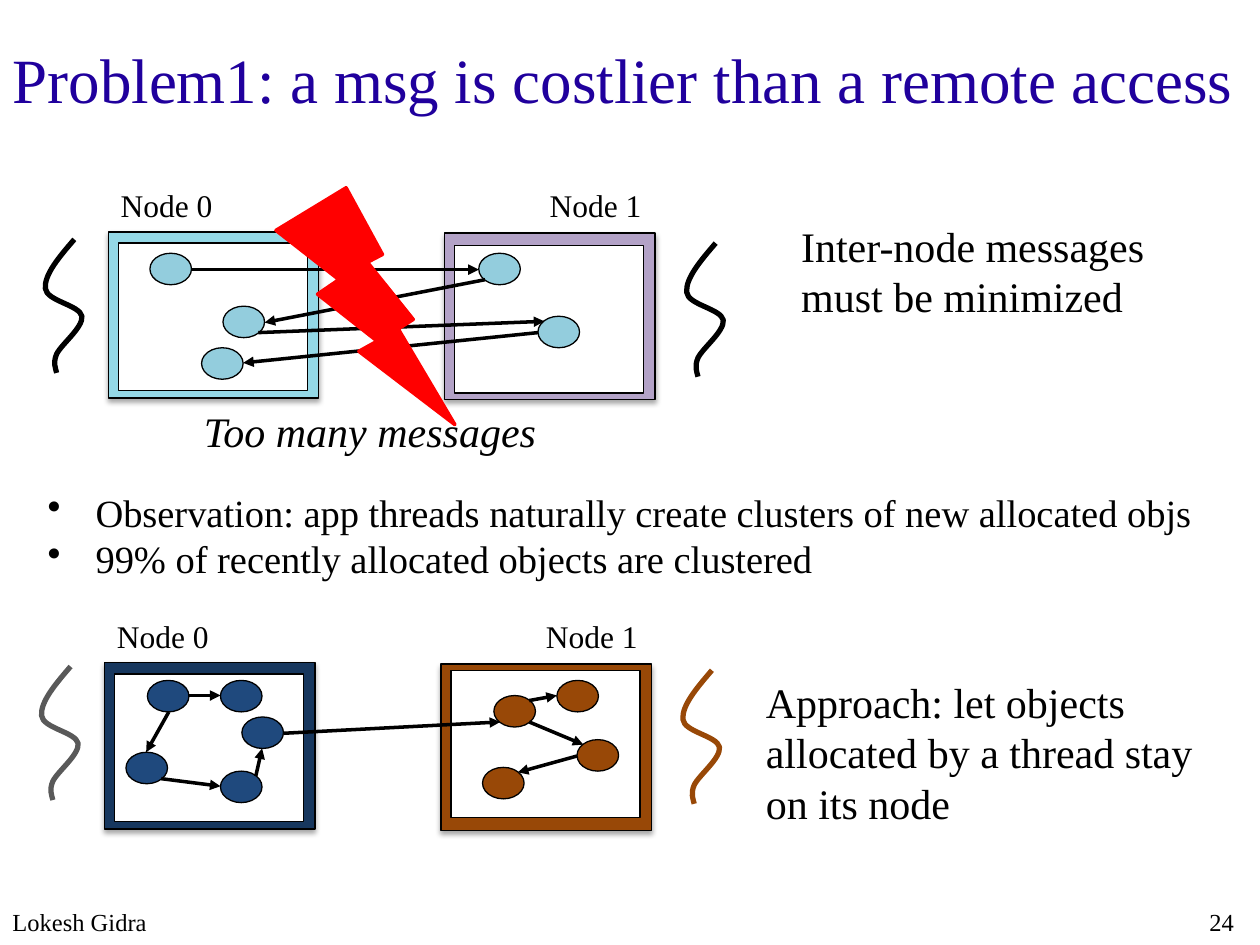
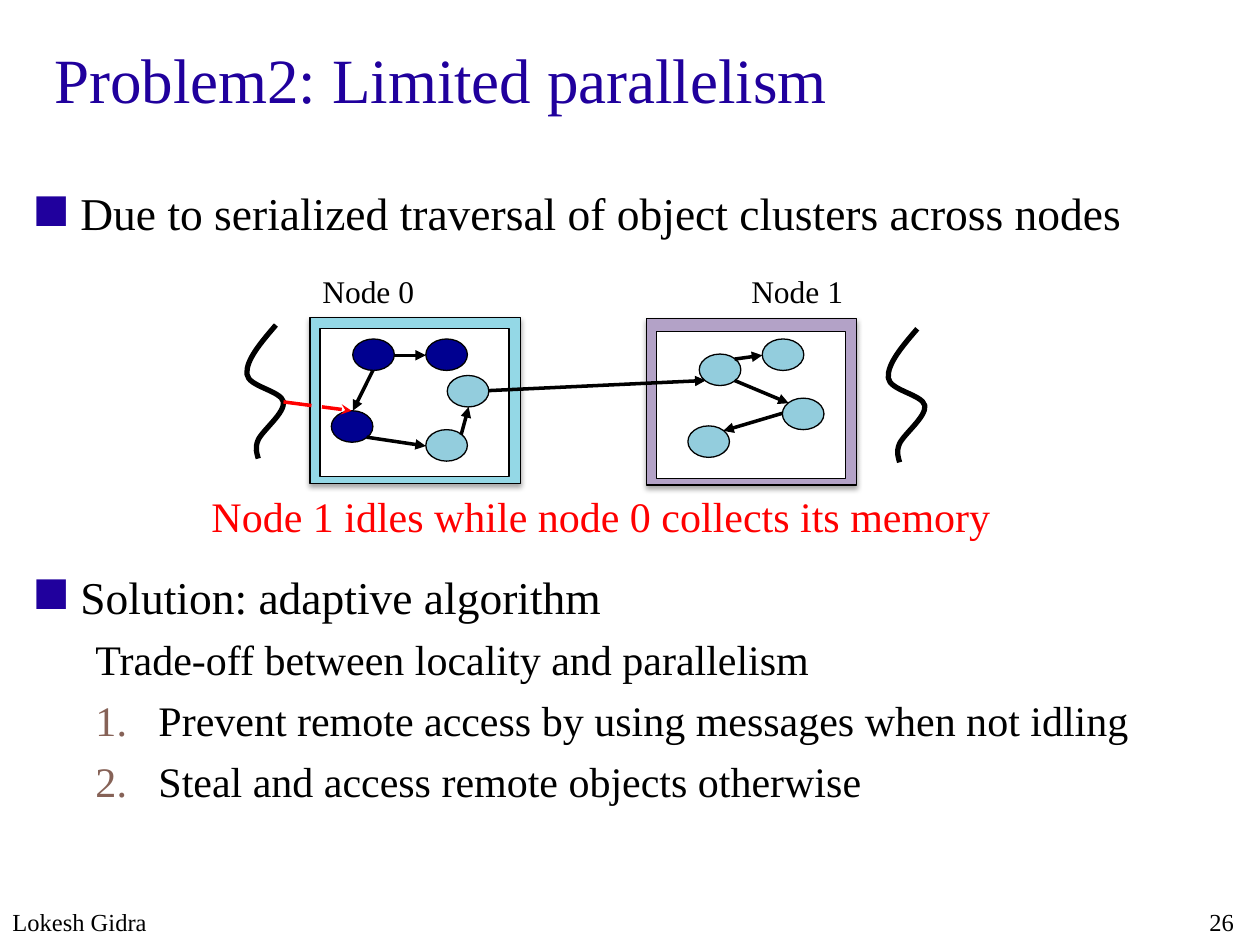
from lxml import etree
from pptx import Presentation
from pptx.dml.color import RGBColor
from pptx.enum.shapes import MSO_CONNECTOR, MSO_SHAPE
from pptx.enum.text import MSO_ANCHOR, PP_ALIGN
from pptx.oxml.ns import qn
from pptx.util import Pt

PX = 9144  # one px is a hundredth of an inch
STRAIGHT = MSO_CONNECTOR.STRAIGHT
RECTANGLE, OVAL, BOLT = MSO_SHAPE.RECTANGLE, MSO_SHAPE.OVAL, MSO_SHAPE.LIGHTNING_BOLT
TOP, MIDDLE = MSO_ANCHOR.TOP, MSO_ANCHOR.MIDDLE
LEFT, RIGHT = PP_ALIGN.LEFT, PP_ALIGN.RIGHT

BLACK = RGBColor(0x00, 0x00, 0x00)
WHITE = RGBColor(0xFF, 0xFF, 0xFF)
RED = RGBColor(0xFF, 0x00, 0x00)
GRAY = RGBColor(0x59, 0x59, 0x59)
TITLE_BLUE = RGBColor(0x20, 0x00, 0x9D)
NUMBER_BROWN = RGBColor(0x86, 0x62, 0x57)
CYAN = RGBColor(0x94, 0xD8, 0xE6)
LAVENDER = RGBColor(0xB3, 0xA2, 0xC7)
NAVY = RGBColor(0x17, 0x37, 0x5E)
BLUE = RGBColor(0x1F, 0x49, 0x7D)
BROWN = RGBColor(0x98, 0x48, 0x07)
PALE_BLUE = RGBColor(0x93, 0xCD, 0xDD)
DARK_BLUE = RGBColor(0x00, 0x00, 0x90)

FONT_NAME = "Times New Roman"
OVAL_WIDTH, OVAL_HEIGHT = 33, 25


def write_text(shape, lines, size, color=BLACK, align=LEFT, anchor=TOP, **font_format):
    frame = shape.text_frame
    frame.word_wrap = True
    frame.vertical_anchor = anchor
    frame.text = "\n".join(lines)
    for paragraph in frame.paragraphs:
        paragraph.alignment = align
        font = paragraph.runs[0].font
        values = {"name": FONT_NAME, "size": Pt(size), **font_format}
        for name, value in values.items():
            setattr(font, name, value)
        font.color.rgb = color
    return frame


def add_filled(slide, kind, box, fill, line=BLACK, line_width=0.75):
    shape = slide.shapes.add_shape(kind, *(value * PX for value in box))
    shape.fill.solid()
    shape.fill.fore_color.rgb = fill
    shape.line.color.rgb = line
    shape.line.width = Pt(line_width)
    shape.shadow.inherit = False
    return shape


presentation = Presentation()
presentation.slide_width, presentation.slide_height = 1000 * PX, 750 * PX

# Titles and footers
slides = []
for title_text, title_left, number in [
    ("Problem1: a msg is costlier than a remote access", 0, "24"),
    ("Problem2: Limited parallelism", 33, "26"),
]:
    slide = presentation.slides.add_slide(presentation.slide_layouts[5])
    title = slide.shapes.title
    box = {"left": title_left, "top": 0, "width": 1000 - title_left, "height": 125}
    for name, value in box.items():
        setattr(title, name, value * PX)
    write_text(title, [title_text], 36, TITLE_BLUE, anchor=MIDDLE)
    for footer, left, width in [("Lokesh Gidra", 0, 612), (number, 950, 50)]:
        footer_box = slide.shapes.add_textbox(left * PX, 713 * PX, width * PX, 37 * PX)
        write_text(footer_box, [footer], 14, anchor=MIDDLE)
    slides.append(slide)
messages_slide, parallelism_slide = slides

# Objects as (left, top) within a diagram; arrows as (object, side, object, side)
DIAGONAL = 0.71
SIDES = {
    "N": (0, -1), "S": (0, 1), "W": (-1, 0), "E": (1, 0),
    "NW": (-DIAGONAL, -DIAGONAL), "NE": (DIAGONAL, -DIAGONAL),
    "SW": (-DIAGONAL, DIAGONAL), "SE": (DIAGONAL, DIAGONAL),
}
SCATTERED = [(33, 17), (91, 59), (74, 92), (294, 17), (341, 67)]
SCATTERED_ARROWS = [(0, "E", 3, "W"), (3, "SW", 1, "E"), (1, "SE", 4, "NW"), (4, "W", 2, "E")]
CLUSTERED = [(34, 17), (92, 17), (109, 46), (17, 74), (92, 89),
             (309, 29), (359, 17), (375, 64), (300, 86)]
CLUSTERED_ARROWS = [
    (0, "E", 1, "W"), (0, "S", 3, "N"), (3, "SE", 4, "W"), (4, "NE", 2, "S"),
    (2, "E", 5, "SW"), (5, "NE", 6, "W"), (5, "SE", 7, "NW"), (7, "W", 8, "NE"),
]

# Thread outline: start point, then two control points and an end point per curve
THREAD_START = (23, 0)
THREAD_CURVES = [
    [(11, 14), (-1, 28), (0, 39)],
    [(1, 49), (27, 52), (29, 61)],
    [(30, 70), (13, 83), (9, 91)],
    [(6, 98), (8, 102), (9, 106)],
]

diagrams = [
    {"slide": messages_slide, "origin": (86, 184), "frame_drop": 0, "inner_drop": 11,
     "frames": [CYAN, LAVENDER], "threads": [BLACK, BLACK],
     "objects": SCATTERED, "arrows": SCATTERED_ARROWS, "fills": [PALE_BLUE] * 5},
    {"slide": messages_slide, "origin": (83, 523), "frame_drop": 3, "inner_drop": 6,
     "frames": [NAVY, BROWN], "threads": [GRAY, BROWN],
     "objects": CLUSTERED, "arrows": CLUSTERED_ARROWS, "fills": [BLUE] * 5 + [BROWN] * 4},
    {"slide": parallelism_slide, "origin": (246, 252), "frame_drop": 0, "inner_drop": 11,
     "frames": [CYAN, LAVENDER], "threads": [BLACK, BLACK],
     "objects": CLUSTERED, "arrows": CLUSTERED_ARROWS,
     "fills": [DARK_BLUE, DARK_BLUE, PALE_BLUE, DARK_BLUE] + [PALE_BLUE] * 5},
]

connector_jobs = []
for diagram in diagrams:
    slide = diagram["slide"]
    left, top = diagram["origin"]
    frame_top = top + diagram["frame_drop"]

    # Node frames, labels and threads
    for node, inner_drop in enumerate([9, diagram["inner_drop"]]):
        frame_left = left + 267 * node
        frame = add_filled(slide, RECTANGLE, (frame_left, frame_top + node, 167, 132),
                           diagram["frames"][node])
        effects = frame._element.spPr.find(qn("a:effectLst"))
        shadow = etree.SubElement(effects, qn("a:outerShdw"), blurRad=str(Pt(3.1)),
                                  dist=str(Pt(1.8)), dir="5400000", rotWithShape="0")
        shadow_color = etree.SubElement(shadow, qn("a:srgbClr"), val=str(BLACK))
        etree.SubElement(shadow_color, qn("a:alpha"), val="35000")
        add_filled(slide, RECTANGLE, (frame_left + 8, frame_top + inner_drop, 150, 117), WHITE)

        label = slide.shapes.add_textbox((left + 333 * node) * PX, (frame_top - 41) * PX,
                                         100 * PX, 40 * PX)
        write_text(label, [f"Node {node}"], 18, align=[LEFT, RIGHT][node])

        builder = slide.shapes.build_freeform(*THREAD_START, scale=PX)
        builder.add_line_segments([curve[-1] for curve in THREAD_CURVES], close=False)
        thread = builder.convert_to_shape((left - 50 + 509 * node) * PX,
                                          (top + 6 + 3 * node) * PX)
        thread.fill.background()
        thread.line.color.rgb = diagram["threads"][node]
        thread.line.width = Pt(3)
        thread.shadow.inherit = False
        segments = list(thread._element.iter(qn("a:lnTo")))
        for segment, curve in zip(segments, THREAD_CURVES):
            segment.tag = qn("a:cubicBezTo")
            for position, (x, y) in enumerate(curve[:2]):
                control = etree.Element(qn("a:pt"), x=str(x), y=str(y))
                segment.insert(position, control)

    # Objects
    for (x, y), fill in zip(diagram["objects"], diagram["fills"]):
        add_filled(slide, OVAL, (left + x, top + y, OVAL_WIDTH, OVAL_HEIGHT), fill)

    # End points of the arrows between objects
    for start, start_side, end, end_side in diagram["arrows"]:
        points = []
        for index, side in [(start, start_side), (end, end_side)]:
            x, y = diagram["objects"][index]
            across, down = SIDES[side]
            points += [round(left + x + OVAL_WIDTH / 2 * (1 + across)),
                       round(top + y + OVAL_HEIGHT / 2 * (1 + down))]
        connector_jobs.append((slide, points, BLACK, None, "triangle"))

# Arrows, with the dashed one from the thread to its first object
connector_jobs.append((parallelism_slide, [225, 319, 279, 326], RED, "lgDash", "stealth"))
for slide, points, color, dash, head in connector_jobs:
    connector = slide.shapes.add_connector(STRAIGHT, *(value * PX for value in points))
    connector.line.color.rgb = color
    connector.line.width = Pt(2)
    line = connector.line._get_or_add_ln()
    if dash:
        etree.SubElement(line, qn("a:prstDash"), val=dash)
    etree.SubElement(line, qn("a:tailEnd"), type=head)
    etree.SubElement(connector._element.spPr, qn("a:effectLst"))

# Lightning bolt across the messages
add_filled(messages_slide, BOLT, (219, 149, 142, 188), RED, RED, 2)

# Remarks beside and below the diagrams
for slide, box, lines, color, italic in [
    (messages_slide, (152, 317, 297, 50), ["Too many messages"], BLACK, True),
    (messages_slide, (626, 170, 312, 91),
     ["Inter-node messages", "must be minimized"], BLACK, False),
    (messages_slide, (598, 532, 374, 131),
     ["Approach: let objects allocated by a thread stay on its node"], BLACK, False),
    (parallelism_slide, (158, 384, 646, 50),
     ["Node 1 idles while node 0 collects its memory"], RED, False),
]:
    remark = slide.shapes.add_textbox(*(value * PX for value in box))
    write_text(remark, lines, 24, color, italic=italic)

# Lists: text, size, level, margin, indent, space before, bullet tag, bullet value, bullet colour
DOT = (38, -38, 0, "buChar", {"char": "•"}, BLACK)
SQUARE = ("buChar", {"char": "◼"}, TITLE_BLUE)
NUMBERED = (100, -50, 6, "buAutoNum", {"type": "arabicPeriod"}, NUMBER_BROWN)
for slide, box, items in [
    (messages_slide, (28, 383, 938, 84), [
        ("Observation: app threads naturally create clusters of new allocated objs", 22, 0, *DOT),
        ("99% of recently allocated objects are clustered", 22, 0, *DOT),
    ]),
    (parallelism_slide, (16, 142, 984, 563), [
        ("Due to serialized traversal of object clusters across nodes", 26, 0, 38, -38, 0, *SQUARE),
        ("Solution: adaptive algorithm", 26, 0, 38, -38, 188, *SQUARE),
        ("Trade-off between locality and parallelism", 24, 1, 50, 0, 6, "buNone", {}, None),
        ("Prevent remote access by using messages when not idling", 24, 1, *NUMBERED),
        ("Steal and access remote objects otherwise", 24, 1, *NUMBERED),
    ]),
]:
    list_box = slide.shapes.add_textbox(*(value * PX for value in box))
    frame = write_text(list_box, [item[0] for item in items], 24)
    for paragraph, item in zip(frame.paragraphs, items):
        _, size, level, margin, indent, before, bullet, bullet_values, bullet_color = item
        paragraph.runs[0].font.size = Pt(size)
        paragraph.level = level
        paragraph.space_before = Pt(before)
        properties = paragraph._p.get_or_add_pPr()
        properties.set("marL", str(margin * PX))
        properties.set("indent", str(indent * PX))
        if bullet_color is not None:
            color_element = etree.SubElement(properties, qn("a:buClr"))
            etree.SubElement(color_element, qn("a:srgbClr"), val=str(bullet_color))
        etree.SubElement(properties, qn(f"a:{bullet}"), **bullet_values)

presentation.save("out.pptx")
